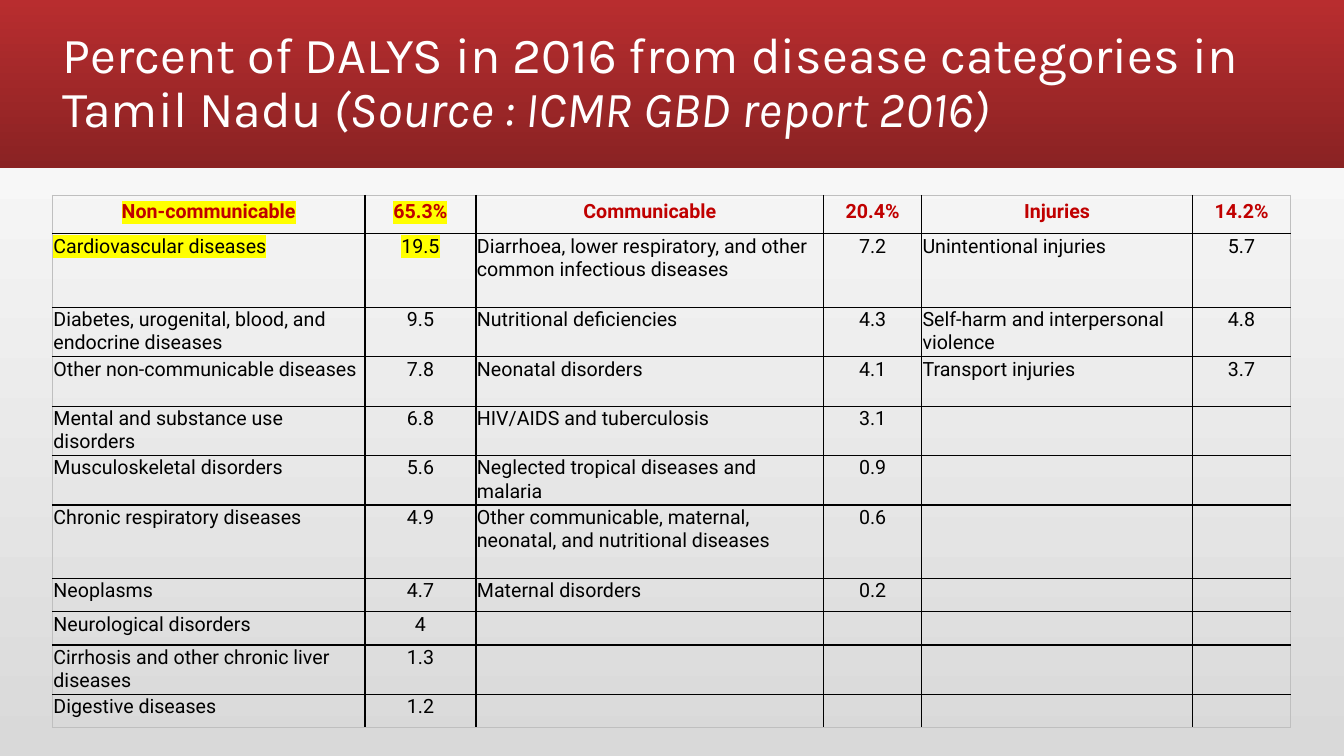
from dataclasses import dataclass
from itertools import chain, zip_longest

from lxml.etree import SubElement
from pptx import Presentation
from pptx.dml.color import RGBColor
from pptx.enum.shapes import MSO_SHAPE
from pptx.enum.text import MSO_ANCHOR, PP_ALIGN
from pptx.oxml.ns import qn
from pptx.util import Emu, Pt


@dataclass(frozen=True)
class Theme:
    """Colours, fonts and type sizes of the deck."""
    page: tuple = ("D9D9D9", "FFFFFF")
    band: tuple = ("B82D2F", "8A2223")
    title: str = "FFFFFF"
    heading: str = "C00000"
    body: str = "000000"
    marker: str = "FFFF00"
    grid: str = "000000"
    frame: str = "BFBFBF"
    title_font: str = "Karla"
    table_font: str = "Roboto"
    title_size: int = 36
    table_size: int = 14
    line_width: int = 1


THEME = Theme()
PX = 9144
SLIDE = (1333, 750)
BAND_BOX = (0, 0, 1333, 167)
TABLE_BOX = (52, 194, 1228, 528)
COLUMN_WIDTHS = (310, 110, 345, 97, 269, 97)
ROW_HEIGHTS = (38, 73, 49, 49, 49, 49, 73, 33, 33, 49, 33)
MARKED_ROWS = 2
MARKED_COLUMNS = 2

NON_COMMUNICABLE = [
    ("Non-communicable", "65.3%"),
    ("Cardiovascular diseases", "19.5"),
    ("Diabetes, urogenital, blood, and endocrine diseases", "9.5"),
    ("Other non-communicable diseases", "7.8"),
    ("Mental and substance use disorders", "6.8"),
    ("Musculoskeletal disorders", "5.6"),
    ("Chronic respiratory diseases", "4.9"),
    ("Neoplasms", "4.7"),
    ("Neurological disorders", "4"),
    ("Cirrhosis and other chronic liver diseases", "1.3"),
    ("Digestive diseases", "1.2"),
]
COMMUNICABLE = [
    ("Communicable", "20.4%"),
    ("Diarrhoea, lower respiratory, and other common infectious diseases", "7.2"),
    ("Nutritional deficiencies", "4.3"),
    ("Neonatal disorders", "4.1"),
    ("HIV/AIDS and tuberculosis", "3.1"),
    ("Neglected tropical diseases and malaria", "0.9"),
    ("Other communicable, maternal, neonatal, and nutritional diseases", "0.6"),
    ("Maternal disorders", "0.2"),
]
INJURIES = [
    ("Injuries", "14.2%"),
    ("Unintentional injuries", "5.7"),
    ("Self-harm and interpersonal violence", "4.8"),
    ("Transport injuries", "3.7"),
]


def px(*lengths):
    """Turn px lengths into EMU."""
    return [Emu(length * PX) for length in lengths]


def set_gradient(fill, colours, angle):
    """Fill with two colours along a counter-clockwise angle."""
    fill.gradient()
    fill.gradient_angle = angle
    for stop, colour in zip(fill.gradient_stops, colours):
        stop.color.rgb = RGBColor.from_string(colour)


def set_font(para, name, size, colour, bold=False):
    """Set the font shared by all runs of a paragraph."""
    font = para.font
    font.name, font.size, font.bold = name, Pt(size), bold
    font.color.rgb = RGBColor.from_string(colour)


def add_title_band(page, box):
    """Place the red band and the title inside it."""
    left, top, width, height = box
    band = page.shapes.add_shape(MSO_SHAPE.RECTANGLE, *px(*box))
    band.shadow.inherit = False
    band.line.fill.background()
    set_gradient(band.fill, THEME.band, 270)

    title = page.shapes.add_textbox(
        *px(left + 52, top + 11, width - 105, height - 22))
    frame = title.text_frame
    frame.word_wrap = True
    frame.vertical_anchor = MSO_ANCHOR.MIDDLE
    para = frame.paragraphs[0]
    para.line_spacing = 0.9
    set_font(para, THEME.title_font, THEME.title_size, THEME.title)
    para.add_run().text = "Percent of DALYS in 2016 from disease categories in Tamil Nadu "
    source = para.add_run()
    source.text = "(Source : ICMR GBD report 2016)"
    source.font.italic = True


def set_borders(cell, outer_sides):
    """Draw the four cell borders, with a pale line on outer sides."""
    properties = cell._tc.get_or_add_tcPr()
    for side in "LRTB":
        line = SubElement(properties, qn(f"a:ln{side}"),
                          w=str(Pt(THEME.line_width)))
        colour = THEME.frame if side in outer_sides else THEME.grid
        SubElement(SubElement(line, qn("a:solidFill")),
                   qn("a:srgbClr"), val=colour)


def highlight(span):
    """Mark a run with the marker colour."""
    mark = SubElement(span._r.get_or_add_rPr(), qn("a:highlight"))
    SubElement(mark, qn("a:srgbClr"), val=THEME.marker)


def fill_cell(cell, text, row, column):
    """Write and style one table cell."""
    is_heading = row == 0
    edges = {"L": column == 0, "R": column == len(COLUMN_WIDTHS) - 1,
             "T": is_heading, "B": row == len(ROW_HEIGHTS) - 1}
    set_borders(cell, [side for side, is_outer in edges.items() if is_outer])
    cell.fill.background()
    margins = px(13, 5, 13, 5) if is_heading else px(1, 1, 1, 0)
    (cell.margin_left, cell.margin_top,
     cell.margin_right, cell.margin_bottom) = margins
    para = cell.text_frame.paragraphs[0]
    centred = is_heading or column % 2
    para.alignment = PP_ALIGN.CENTER if centred else PP_ALIGN.LEFT
    set_font(para, THEME.table_font, THEME.table_size,
             THEME.heading if is_heading else THEME.body, is_heading)
    if text:
        span = para.add_run()
        span.text = text
        if row < MARKED_ROWS and column < MARKED_COLUMNS:
            highlight(span)


def add_disease_table(page, box):
    """Place the three disease groups side by side in one table."""
    table = page.shapes.add_table(
        len(ROW_HEIGHTS), len(COLUMN_WIDTHS), *px(*box)).table
    table.first_row = table.horz_banding = False
    for column, width in zip(table.columns, px(*COLUMN_WIDTHS)):
        column.width = width
    for row, height in zip(table.rows, px(*ROW_HEIGHTS)):
        row.height = height
    groups = zip_longest(NON_COMMUNICABLE, COMMUNICABLE, INJURIES,
                         fillvalue=("", ""))
    for row, entries in enumerate(groups):
        for column, text in enumerate(chain.from_iterable(entries)):
            fill_cell(table.cell(row, column), text, row, column)


def main():
    """Build and save the deck."""
    deck = Presentation()
    deck.slide_width, deck.slide_height = px(*SLIDE)
    page = deck.slides.add_slide(deck.slide_layouts[6])
    set_gradient(page.background.fill, THEME.page, 90)
    add_title_band(page, BAND_BOX)
    add_disease_table(page, TABLE_BOX)
    deck.save("out.pptx")


if __name__ == "__main__":
    main()
